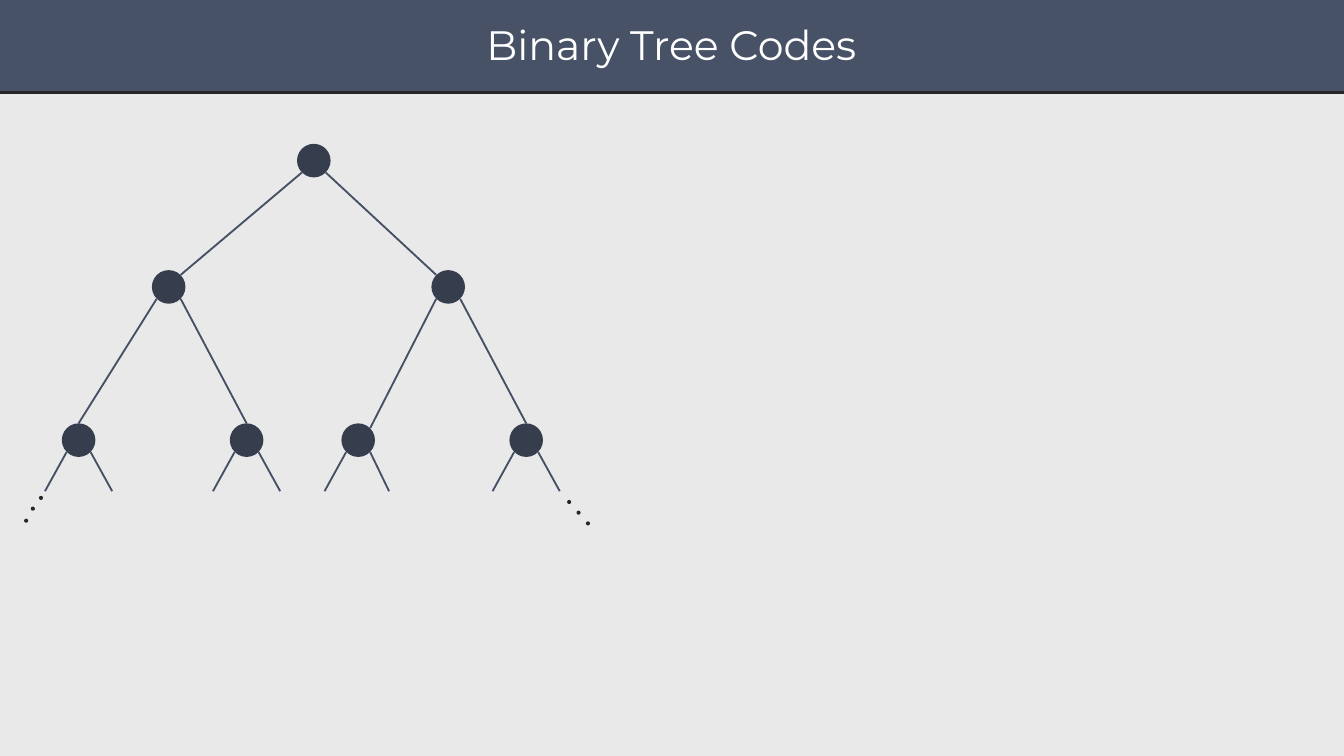
"""Build the Binary Tree Codes slide."""
from pptx import Presentation
from pptx.dml.color import RGBColor
from pptx.enum.shapes import MSO_CONNECTOR, MSO_SHAPE
from pptx.enum.text import MSO_ANCHOR, PP_ALIGN
from pptx.oxml.ns import qn
from pptx.util import Inches, Pt
from lxml.etree import SubElement

BACKGROUND = RGBColor(0xE9, 0xE9, 0xE9)
BANNER = RGBColor(0x48, 0x52, 0x67)
DARK = RGBColor(0x26, 0x26, 0x26)
NODE = RGBColor(0x36, 0x3D, 0x4D)
EDGE = RGBColor(0x46, 0x50, 0x65)
WHITE = RGBColor(0xFF, 0xFF, 0xFF)

NODE_SIZE = 0.25
RADIUS = NODE_SIZE / 2
RIM = 0.09
DOT_SIZE = 0.03


def write_text(shape, text, *, font, size, color, align, anchor):
    frame = shape.text_frame
    frame.word_wrap = True
    frame.vertical_anchor = anchor
    frame.margin_left = frame.margin_right = 0
    frame.margin_top = frame.margin_bottom = 0
    paragraph = frame.paragraphs[0]
    paragraph.alignment = align
    run = paragraph.add_run()
    run.text = text
    run.font.name = font
    run.font.size = Pt(size)
    run.font.color.rgb = color


def add_filled(shapes, kind, left, top, width, height, color):
    shape = shapes.add_shape(
        kind, Inches(left), Inches(top), Inches(width), Inches(height))
    shape.shadow.inherit = False
    shape.fill.solid()
    shape.fill.fore_color.rgb = color
    shape.line.fill.background()
    return shape


presentation = Presentation()
presentation.slide_width = Inches(10)
presentation.slide_height = Inches(10) * 9 // 16
slide = presentation.slides.add_slide(presentation.slide_layouts[5])
slide.background.fill.solid()
slide.background.fill.fore_color.rgb = BACKGROUND

banner = add_filled(slide.shapes, MSO_SHAPE.RECTANGLE, -0.25, -0.1, 10.42, 0.79, BANNER)
banner.line.color.rgb = DARK
banner.line.width = Pt(1.5)

title = slide.shapes.title
title.left, title.top = Inches(0.42), Inches(0.06)
title.width, title.height = Inches(9.15), Inches(0.54)
write_text(title, "Binary Tree Codes", font="Montserrat", size=22, color=WHITE,
           align=PP_ALIGN.CENTER, anchor=MSO_ANCHOR.MIDDLE)
banner.element.addnext(title.element)

corners = {
    "root": (2.21, 1.07),
    "left": (1.13, 2.01),
    "right": (3.21, 2.01),
    "left left": (0.46, 3.15),
    "left right": (1.71, 3.15),
    "right left": (2.54, 3.15),
    "right right": (3.79, 3.15),
}
tree = slide.shapes.add_group_shape()
nodes = {}
centers = {}
for name, (left, top) in corners.items():
    nodes[name] = add_filled(
        tree.shapes, MSO_SHAPE.OVAL, left, top, NODE_SIZE, NODE_SIZE, NODE)
    centers[name] = (left + RADIUS, top + RADIUS)

edges = [
    ("root", -1, "left", (RIM, -RIM)),
    ("root", 1, "right", (-RIM, -RIM)),
    ("left", -1, "left left", None),
    ("left", 1, "left right", None),
    ("right", -1, "right left", (RIM, -RIM)),
    ("right", 1, "right right", None),
]
for leaf in ("left left", "left right", "right left", "right right"):
    right_reach = 0.23 if leaf == "right left" else 0.25
    edges.append((leaf, -1, leaf, (-0.25, 0.38)))
    edges.append((leaf, 1, leaf, (right_reach, 0.38)))

for parent, side, child, offset in edges:
    parent_x, parent_y = centers[parent]
    child_x, child_y = centers[child]
    offset_x, offset_y = offset or (0, -RADIUS)
    edge = tree.shapes.add_connector(
        MSO_CONNECTOR.STRAIGHT,
        Inches(parent_x + side * RIM), Inches(parent_y + RIM),
        Inches(child_x + offset_x), Inches(child_y + offset_y))
    edge.line.color.rgb = EDGE
    edge.line.width = Pt(1)
    SubElement(edge.element.spPr, qn("a:effectLst"))
    if offset is None:
        edge.end_connect(nodes[child], 0)

dots = [(0.29, 3.69), (0.23, 3.77), (0.18, 3.86),
        (4.22, 3.72), (4.29, 3.8), (4.36, 3.88)]
for left, top in dots:
    add_filled(slide.shapes, MSO_SHAPE.OVAL, left, top, DOT_SIZE, DOT_SIZE, DARK)

presentation.save("out.pptx")
